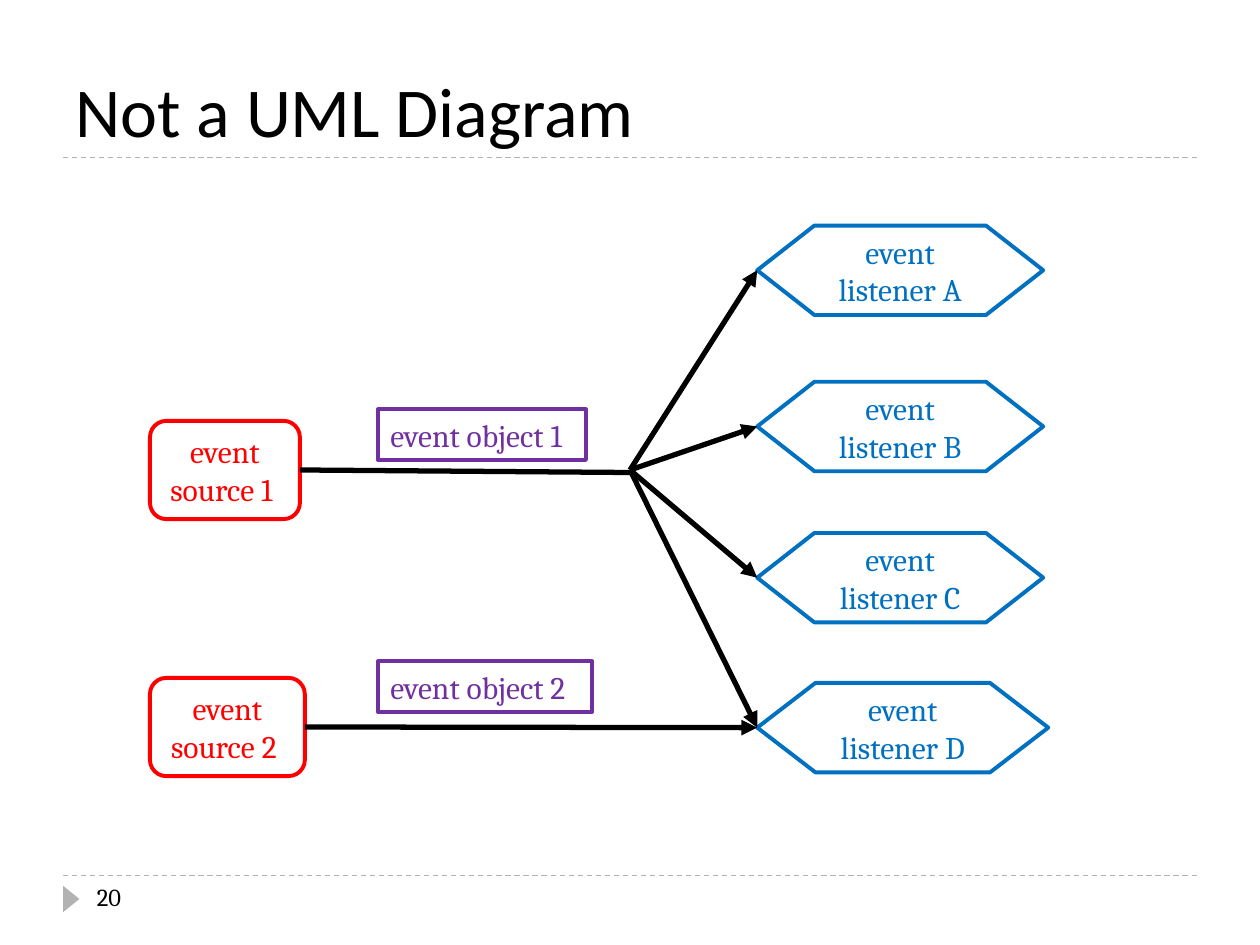
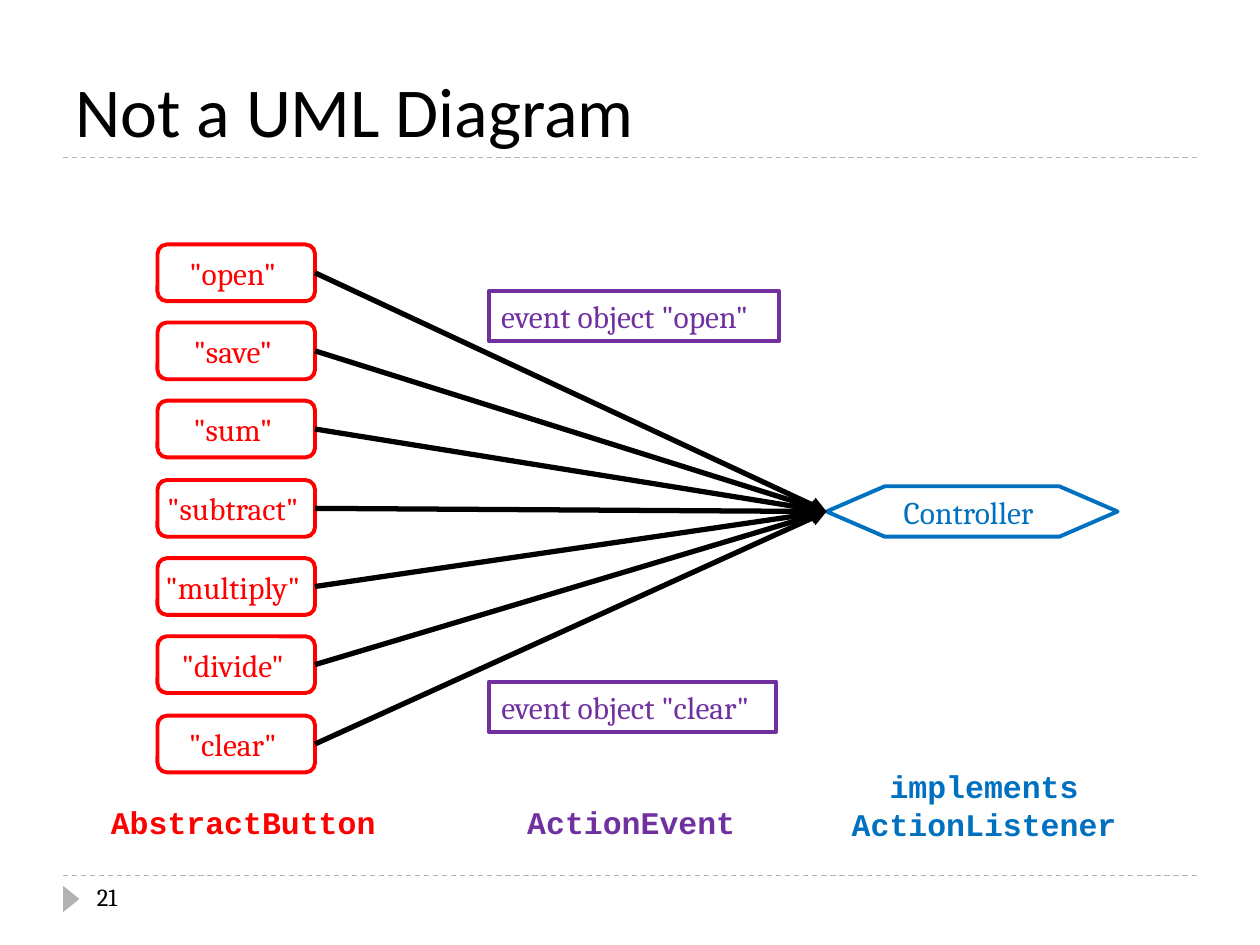
from dataclasses import dataclass

from lxml.etree import SubElement
from pptx import Presentation
from pptx.dml.color import RGBColor
from pptx.enum.dml import MSO_LINE
from pptx.enum.shapes import MSO_CONNECTOR, MSO_SHAPE
from pptx.enum.text import MSO_ANCHOR, MSO_AUTO_SIZE, PP_ALIGN
from pptx.oxml.ns import qn
from pptx.util import Pt

PX = 9144  # 100 px to the inch
LEFT_SITE, RIGHT_SITE = 1, 3


@dataclass(frozen=True)
class Theme:
    ink: RGBColor = RGBColor(0x00, 0x00, 0x00)
    rule: RGBColor = RGBColor(0xB2, 0xB2, 0xB2)
    source: RGBColor = RGBColor(0xFF, 0x00, 0x00)
    event: RGBColor = RGBColor(0x70, 0x30, 0xA0)
    listener: RGBColor = RGBColor(0x00, 0x70, 0xC0)
    title_font: str = "Calibri"
    body_font: str = "Cambria"
    code_font: str = "Courier New"
    title_size: Pt = Pt(40)
    body_size: Pt = Pt(18)
    number_size: Pt = Pt(14)
    outline: Pt = Pt(2.25)
    arrow: Pt = Pt(3)
    hairline: Pt = Pt(0.75)


theme = Theme()


def add_node(slide, preset, box, lines, color, align=PP_ALIGN.CENTER, code=False):
    """Add an unfilled shape with one paragraph per line; code captions get no outline."""
    node = slide.shapes.add_shape(preset, *(n * PX for n in box))
    node.shadow.inherit = False
    node.fill.background()
    if code:
        node.line.fill.background()
    else:
        node.line.color.rgb = color
        node.line.width = theme.outline
    frame = node.text_frame
    frame.word_wrap = align == PP_ALIGN.LEFT
    frame.vertical_anchor = MSO_ANCHOR.MIDDLE
    for i, line in enumerate(lines):
        paragraph = frame.paragraphs[0] if i == 0 else frame.add_paragraph()
        paragraph.alignment = align
        run = paragraph.add_run()
        run.text = line
        run.font.name = theme.code_font if code else theme.body_font
        run.font.size = theme.body_size
        run.font.bold = code
        run.font.color.rgb = color
    return node


def add_line(slide, start, end, color=theme.ink, width=theme.arrow, arrowhead=True):
    line = slide.shapes.add_connector(
        MSO_CONNECTOR.STRAIGHT, *(n * PX for n in (*start, *end)))
    line.line.color.rgb = color
    line.line.width = width
    if arrowhead:
        SubElement(line.line._get_or_add_ln(), qn("a:tailEnd"), type="triangle")
    SubElement(line._element.spPr, qn("a:effectLst"))
    return line


prs = Presentation()
prs.slide_width, prs.slide_height = 1000 * PX, 750 * PX

# Title, rules and page number shared by both slides
slides = []
for number in (20, 21):
    slide = prs.slides.add_slide(prs.slide_layouts[5])
    slides.append(slide)
    for y in (695, 125):
        rule = add_line(slide, (50, y), (950, y), theme.rule, theme.hairline, False)
        rule.line.dash_style = MSO_LINE.DASH

    marker = slide.shapes.add_shape(
        MSO_SHAPE.ISOSCELES_TRIANGLE, 46 * PX, 707 * PX, 21 * PX, 13 * PX)
    marker.rotation = 90
    marker.shadow.inherit = False
    marker.fill.solid()
    marker.fill.fore_color.rgb = theme.rule
    marker.line.fill.background()

    title = slide.shapes.title
    title.left, title.top, title.width, title.height = 50 * PX, 25 * PX, 900 * PX, 100 * PX
    title.text_frame.auto_size = MSO_AUTO_SIZE.NONE
    title.text_frame.vertical_anchor = MSO_ANCHOR.BOTTOM
    heading = title.text_frame.paragraphs[0]
    heading.alignment = PP_ALIGN.LEFT
    heading_run = heading.add_run()
    heading_run.text = "Not a UML Diagram"
    heading_run.font.name = theme.title_font
    heading_run.font.size = theme.title_size
    heading_run.font.color.rgb = theme.ink

    page = slide.shapes.add_textbox(67 * PX, 695 * PX, 217 * PX, 40 * PX)
    page.text_frame.word_wrap = True
    page_run = page.text_frame.paragraphs[0].add_run()
    page_run.text = str(number)
    page_run.font.name = theme.body_font
    page_run.font.size = theme.number_size
    page_run.font.color.rgb = theme.ink

general, calculator = slides

# Two sources, four listeners
sources = [
    add_node(general, MSO_SHAPE.ROUNDED_RECTANGLE, (119, top, width, 78),
             ("event", f"source {i} "), theme.source)
    for i, top, width in ((1, 334, 119), (2, 538, 123))
]
listeners = [
    add_node(general, MSO_SHAPE.FLOWCHART_PREPARATION, (601, top, width, 71),
             ("event", f" listener {letter} "), theme.listener)
    for letter, top, width in (("A", 179, 227), ("B", 303, 227),
                               ("C", 423, 227), ("D", 542, 231))
]

hub = (500, 373)
trunk = add_line(general, (238, 373), (500, 375), arrowhead=False)
trunk.begin_connect(sources[0], RIGHT_SITE)
for listener in listeners:
    branch = add_line(general, hub, hub)
    branch.end_connect(listener, LEFT_SITE)
direct = add_line(general, (242, 577), (601, 577))
direct.begin_connect(sources[1], RIGHT_SITE)
direct.end_connect(listeners[-1], LEFT_SITE)

# Buttons that all report to one controller
controller = add_node(calculator, MSO_SHAPE.FLOWCHART_PREPARATION, (656, 386, 231, 40),
                      ("Controller ",), theme.listener)
actions = ("open", "save", "sum", "subtract", "multiply", "divide", "clear")
for i, action in enumerate(actions):
    top = 194 + i * 374 // 6
    button = add_node(calculator, MSO_SHAPE.ROUNDED_RECTANGLE, (125, top, 125, 45),
                      (f'"{action}" ',), theme.source)
    report = add_line(calculator, (250, top + 22), (656, 406))
    report.begin_connect(button, RIGHT_SITE)
    report.end_connect(controller, LEFT_SITE)

# Event objects travelling along the arrows
for slide, label, box in (
    (general, "1", (300, 325, 165, 40)),
    (general, "2", (300, 525, 170, 40)),
    (calculator, '"open"', (388, 231, 230, 40)),
    (calculator, '"clear"', (388, 541, 228, 40)),
):
    add_node(slide, MSO_SHAPE.FLOWCHART_PROCESS, box, (f"event object {label}",),
             theme.event, PP_ALIGN.LEFT)

# Class names below each column
for lines, box, color in (
    (("AbstractButton ",), (76, 630, 249, 45), theme.source),
    (("ActionEvent",), (406, 630, 190, 45), theme.event),
    (("implements", "ActionListener"), (662, 600, 238, 78), theme.listener),
):
    add_node(calculator, MSO_SHAPE.ROUNDED_RECTANGLE, box, lines, color, code=True)

prs.save("out.pptx")
